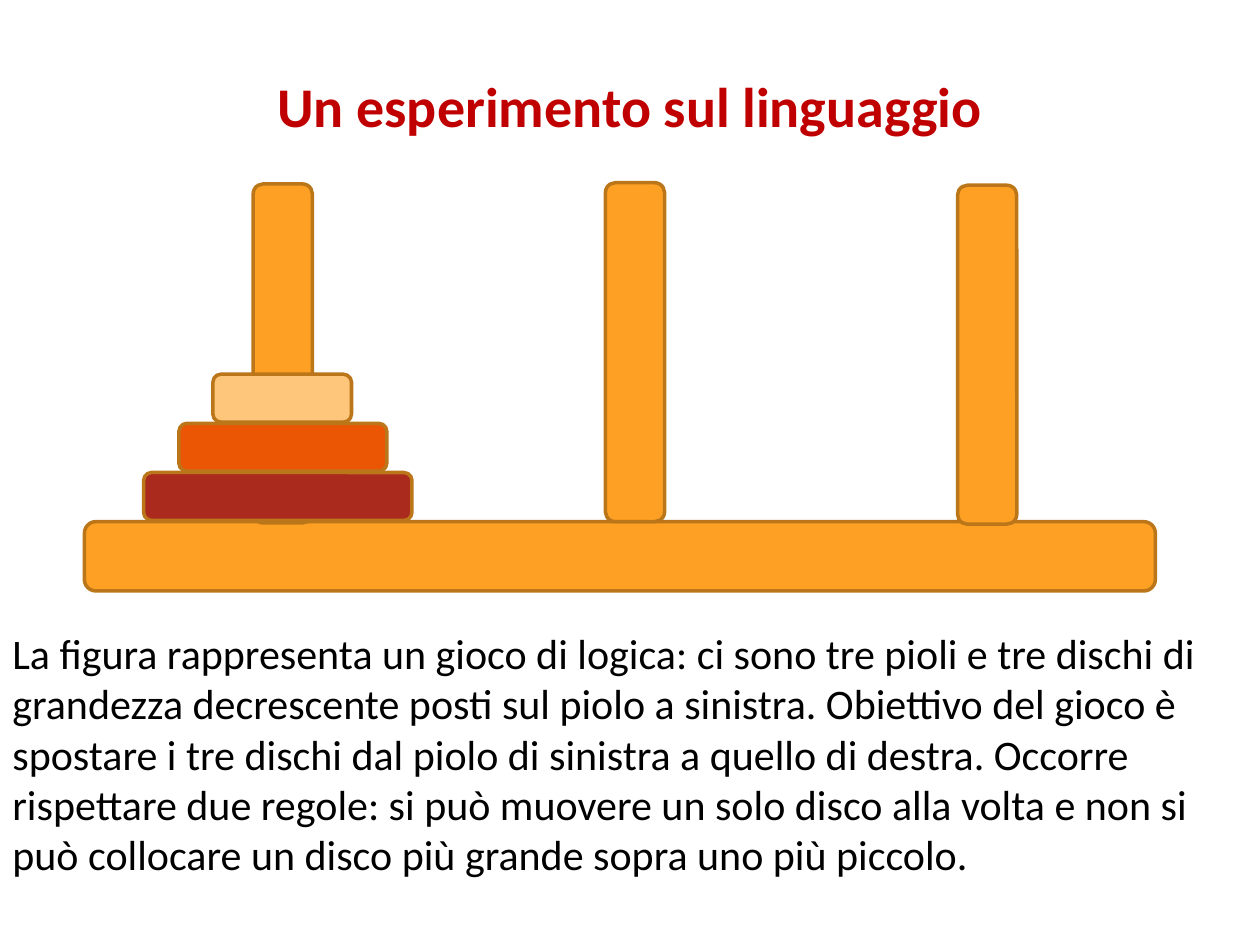
from dataclasses import dataclass

import pptx
import pptx.dml.color
import pptx.enum.shapes
import pptx.enum.text
import pptx.util

COLUMNS, ROWS = 100, 75
CELL = pptx.util.Inches(0.1)
FONT = "Calibri"
COLORS = {
    "title": "C00000",
    "body": "000000",
    "wood": "FDA023",
    "edge": "BB761A",
    "large": "AA2B1E",
    "medium": "EB5605",
    "small": "FEC67B",
}

TITLE = "Un esperimento sul linguaggio"
RULES = (
    "La figura rappresenta un gioco di logica: ci sono tre pioli e tre dischi di "
    "grandezza decrescente posti sul piolo a sinistra. Obiettivo del gioco è "
    "spostare i tre dischi dal piolo di sinistra a quello di destra. Occorre "
    "rispettare due regole: si può muovere un solo disco alla volta e non si "
    "può collocare un disco più grande sopra uno più piccolo."
)


@dataclass(frozen=True)
class Area:
    """A rectangle in grid columns and rows."""
    column: float
    row: float
    columns: float
    rows: float

    def lengths(self) -> list[int]:
        return [round(cells * CELL)
                for cells in (self.column, self.row, self.columns, self.rows)]


@dataclass(frozen=True)
class Piece:
    area: Area
    color: str


def rgb(name: str) -> pptx.dml.color.RGBColor:
    return pptx.dml.color.RGBColor.from_string(COLORS[name])


def draw_piece(slide, piece: Piece) -> None:
    block = slide.shapes.add_shape(
        pptx.enum.shapes.MSO_SHAPE.ROUNDED_RECTANGLE, *piece.area.lengths())
    block.shadow.inherit = False
    block.fill.solid()
    block.fill.fore_color.rgb = rgb(piece.color)
    block.line.color.rgb = rgb("edge")
    block.line.width = pptx.util.Pt(2)


def draw_text(slide, area: Area, text: str, size: int, color: str,
              align=pptx.enum.text.PP_ALIGN.LEFT,
              anchor=pptx.enum.text.MSO_ANCHOR.TOP, bold: bool = False) -> None:
    frame = slide.shapes.add_textbox(*area.lengths()).text_frame
    frame.word_wrap = True
    frame.vertical_anchor = anchor
    paragraph = frame.paragraphs[0]
    paragraph.text = text
    paragraph.alignment = align
    paragraph.font.name = FONT
    paragraph.font.size = pptx.util.Pt(size)
    paragraph.font.bold = bold
    paragraph.font.color.rgb = rgb(color)


def game_pieces() -> list[Piece]:
    """Base, pegs and discs, from back to front."""
    base = Piece(Area(6.7, 41.4, 85, 5.5), "wood")
    peg_pitch, disc_pitch = 27.95, 3.9
    pegs = [Piece(Area(20.1 + i * peg_pitch, top, 4.7, 26.9), "wood")
            for i, top in enumerate((14.6, 14.5, 14.7))]
    discs = [Piece(Area(left, 37.5 - i * disc_pitch, width, 3.8), color)
             for i, (left, width, color) in enumerate((
                 (11.4, 21.3, "large"),
                 (14.2, 16.5, "medium"),
                 (16.9, 11, "small")))]
    return [base, *pegs, *discs]


def main() -> None:
    deck = pptx.Presentation()
    deck.slide_width, deck.slide_height = COLUMNS * CELL, ROWS * CELL
    slide = deck.slides.add_slide(deck.slide_layouts[6])
    draw_text(slide, Area(5, 2.1, 90, 12.5), TITLE, 32, "title",
              align=pptx.enum.text.PP_ALIGN.CENTER,
              anchor=pptx.enum.text.MSO_ANCHOR.MIDDLE, bold=True)
    draw_text(slide, Area(0, 49.3, COLUMNS, 21.2), RULES, 24, "body")
    for piece in game_pieces():
        draw_piece(slide, piece)
    deck.save("out.pptx")


if __name__ == "__main__":
    main()
